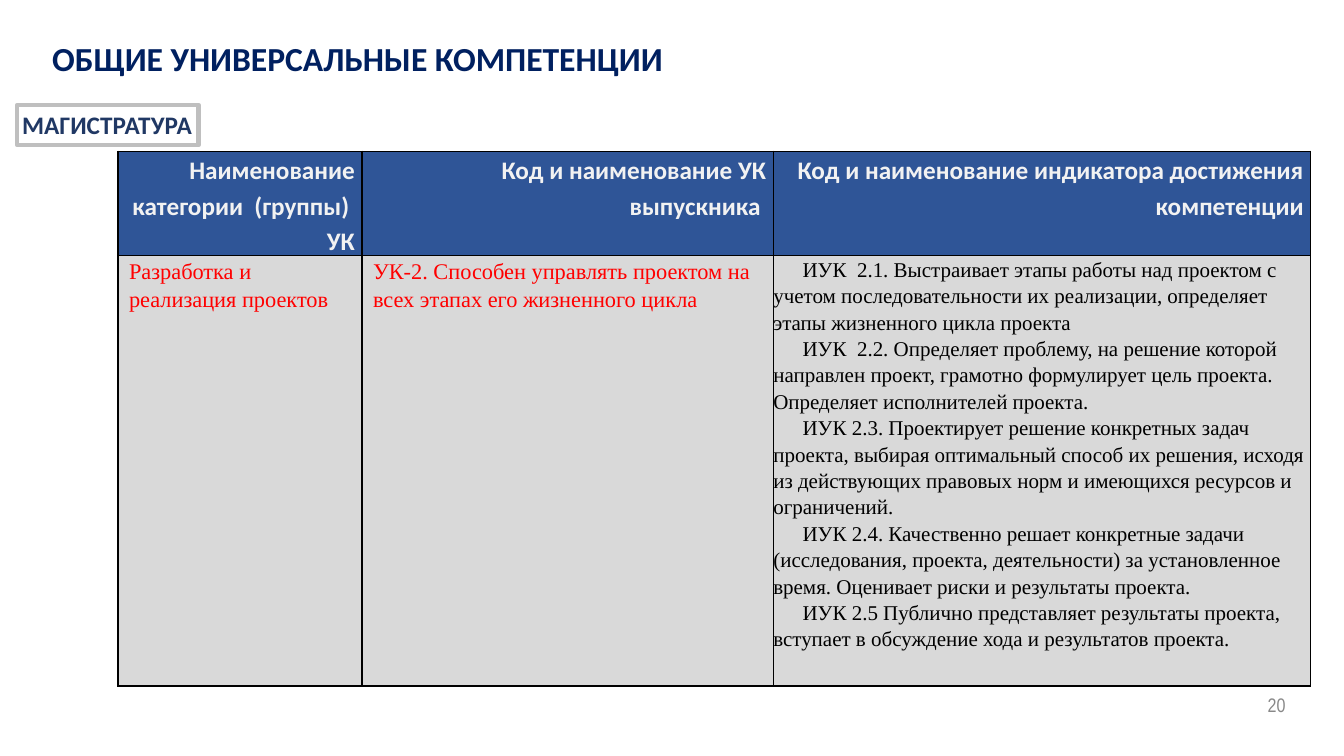
from lxml.etree import SubElement as Sub
from pptx import Presentation
from pptx.dml.color import RGBColor as RGB
from pptx.enum.shapes import MSO_SHAPE as Shape
from pptx.enum.text import MSO_ANCHOR as Anchor, PP_ALIGN as Align
from pptx.oxml.ns import qn
from pptx.util import Inches, Pt

# Content
TITLE = "ОБЩИЕ УНИВЕРСАЛЬНЫЕ КОМПЕТЕНЦИИ"
LEVEL = "МАГИСТРАТУРА"
NUMBER = "20"
HEADS = [
    "Наименование категории  (группы)  УК",
    "Код и наименование УК выпускника ",
    "Код и наименование индикатора достижения компетенции",
]
GROUP = "Разработка и реализация проектов"
SKILL = "УК-2. Способен управлять проектом на всех этапах его жизненного цикла"
SIGNS = [
    "ИУК  2.1. Выстраивает этапы работы над проектом с учетом "
    "последовательности их реализации, определяет этапы жизненного цикла проекта",
    "ИУК  2.2. Определяет проблему, на решение которой направлен проект, "
    "грамотно формулирует цель проекта. Определяет исполнителей проекта.",
    "ИУК 2.3. Проектирует решение конкретных задач проекта, выбирая "
    "оптимальный способ их решения, исходя из действующих правовых норм "
    "и имеющихся ресурсов и ограничений.",
    "ИУК 2.4. Качественно решает конкретные задачи (исследования, проекта, "
    "деятельности) за установленное время. Оценивает риски и результаты проекта.",
    "ИУК 2.5 Публично представляет результаты проекта, вступает "
    "в обсуждение хода и результатов проекта.",
]
COLS = [2.42, 4.08, 5.33]
ROWS = [1.03, 4.27]
COLOR = {
    "title": "002060", "level": "203864", "frame": "BFBFBF", "white": "FFFFFF",
    "head": "2F5597", "light": "F2F2F2", "body": "D9D9D9", "red": "FF0000",
    "black": "000000", "number": "888888",
}


def hue(name):
    return RGB.from_string(COLOR[name])


def write(frame, text, size, color, font="Calibri", bold=False,
          align=Align.LEFT, space=None, left=0, first=0):
    lines = [text] if isinstance(text, str) else text
    for i, line in enumerate(lines):
        para = frame.add_paragraph() if i else frame.paragraphs[0]
        para.alignment = align
        if space:
            para.line_spacing = space
        props = para._p.get_or_add_pPr()
        props.set("marL", str(Inches(left)))
        props.set("indent", str(Inches(first)))
        run = para.add_run()
        run.text = line
        run.font.size = Pt(size)
        run.font.name = font
        run.font.bold = bold
        run.font.color.rgb = hue(color)


def inset(item, x, y):
    item.margin_left = item.margin_right = Inches(x)
    item.margin_top = item.margin_bottom = Inches(y)


def fill(item, color):
    item.fill.solid()
    item.fill.fore_color.rgb = hue(color)


def edge(cell):
    props = cell._tc.get_or_add_tcPr()
    for i, side in enumerate(("lnL", "lnR", "lnT", "lnB")):
        line = Sub(props, qn("a:" + side), w=str(Pt(1)))
        props.insert(i, line)
        Sub(Sub(line, qn("a:solidFill")), qn("a:srgbClr"), val=COLOR["black"])


deck = Presentation()
deck.slide_width, deck.slide_height = Inches(13.33), Inches(7.5)
slide = deck.slides.add_slide(deck.slide_layouts[6])
shapes = slide.shapes


def label(x, y, w, h, pad, text, anchor=Anchor.TOP, **style):
    frame = shapes.add_textbox(*map(Inches, (x, y, w, h))).text_frame
    frame.word_wrap = True
    frame.vertical_anchor = anchor
    inset(frame, *pad)
    write(frame, text, **style)


# Title and slide number
label(0.42, 0.33, 12, 0.5, (0.1, 0.05), TITLE, size=24, color="title", bold=True)
label(9.75, 6.83, 3, 0.32, (0, 0), NUMBER, anchor=Anchor.MIDDLE, size=14,
      color="number", font="Arial Narrow", align=Align.RIGHT)

# Table of competences
holder = shapes.add_table(len(ROWS), len(COLS), Inches(1.17), Inches(1.5),
                          Inches(sum(COLS)), Inches(sum(ROWS)))
table = holder.table
for col, width in zip(table.columns, COLS):
    col.width = Inches(width)
for row, height in zip(table.rows, ROWS):
    row.height = Inches(height)

HEAD = dict(size=18, color="light", bold=True, align=Align.RIGHT, space=1.15)
SERIF = dict(font="Times New Roman")
RED = dict(SERIF, size=16, color="red", space=1.15, left=0.04)
SIGN = dict(SERIF, size=15, color="black", space=1.14, first=0.29)
grid = [
    [(text, HEAD, 0.07) for text in HEADS],
    [(GROUP, RED, 0.07), (SKILL, RED, 0.07), (SIGNS, SIGN, 0)],
]
for r, (line, back) in enumerate(zip(grid, ("head", "body"))):
    for c, (text, style, pad) in enumerate(line):
        cell = table.cell(r, c)
        inset(cell, pad, 0)
        fill(cell, back)
        edge(cell)
        write(cell.text_frame, text, **style)

# Framed level tag
tag = shapes.add_shape(Shape.RECTANGLE, *map(Inches, (0.17, 1.04, 1.8, 0.4)))
tag.shadow.inherit = False
fill(tag, "white")
tag.line.color.rgb = hue("frame")
tag.line.width = Pt(3)
frame = tag.text_frame
frame.word_wrap = False
frame.vertical_anchor = Anchor.TOP
inset(frame, 0.05, 0.05)
write(frame, LEVEL, size=18, color="level", bold=True)

deck.save("out.pptx")
